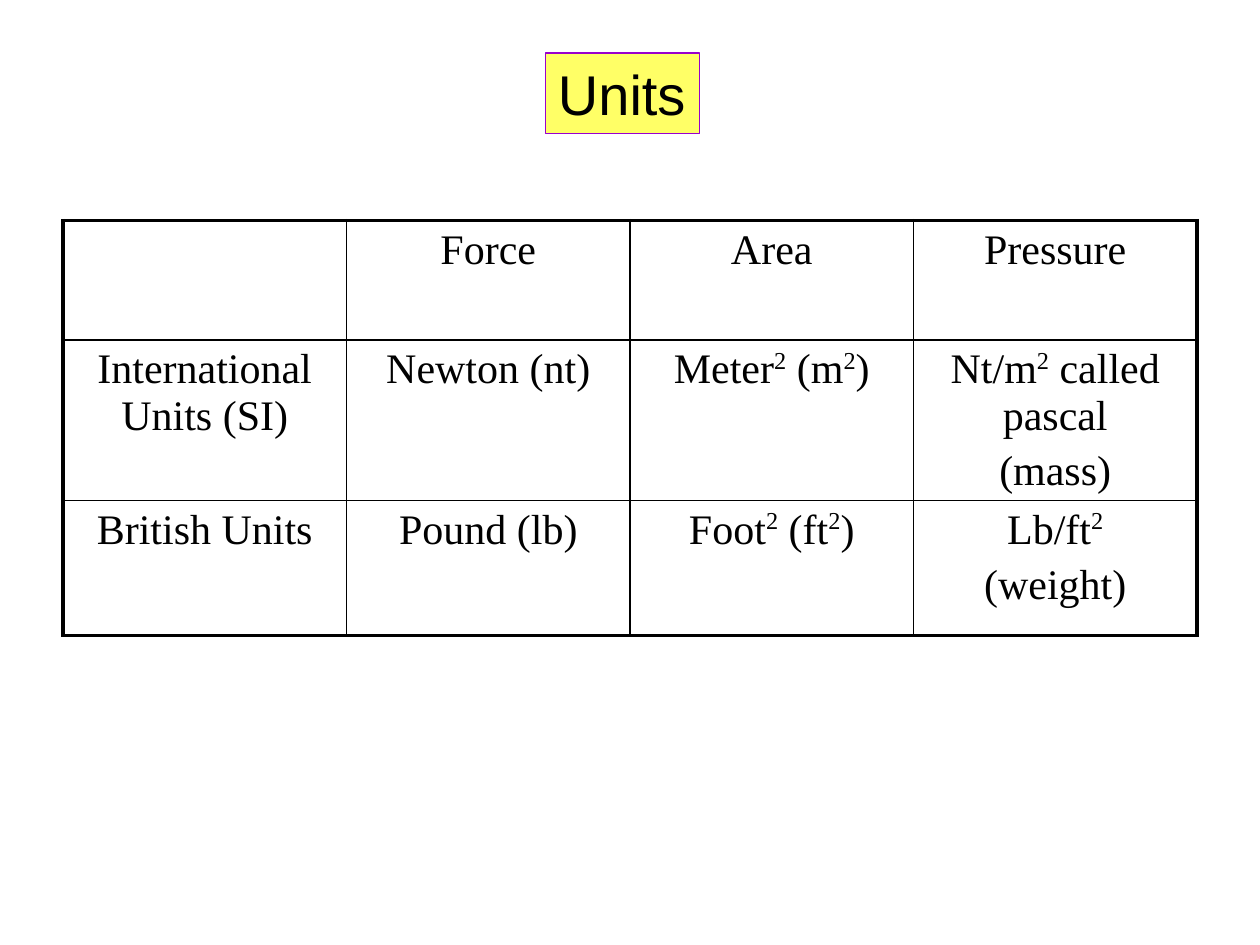
from lxml import etree
from pptx import Presentation, util as u
from pptx.dml.color import RGBColor
from pptx.enum import shapes, text
from pptx.oxml.ns import qn

TITLE = "Units"
# One list of paragraphs per cell; text between carets is superscript.
ROWS = [
    [[], ["Force"], ["Area"], ["Pressure"]],
    [["International Units (SI)"], ["Newton (nt)"], ["Meter^2^ (m^2^)"],
     ["Nt/m^2^ called pascal", "(mass)"]],
    [["British Units"], ["Pound (lb)"], ["Foot^2^ (ft^2^)"],
     ["Lb/ft^2^", "(weight)"]],
]
THEME = {
    "ink": "000000", "title_fill": "FFFF66", "title_line": "9900CC",
    "title_font": "Arial", "title_size": 32,
    "table_font": "Times New Roman", "table_size": 24,
    "outer_line": 2.25, "inner_line": 1, "title_line_width": 0.75,
    "superscript": 34000, "space_before": 20000,
}
SLIDE_WIDTH, SLIDE_HEIGHT = 10, 7.5
MARGIN = 0.05 * SLIDE_WIDTH
TABLE_TOP = 1.75
ROW_HEIGHTS = [0.95, 1.07, 1.07]
TITLE_BOX = (4.33, 0.42, 1.22, 0.64)


def add_run(paragraph, content, font, size):
    run = paragraph.add_run()
    run.text = content
    run.font.name = font
    run.font.size = u.Pt(size)
    run.font.color.rgb = RGBColor.from_string(THEME["ink"])
    return run


def add_title(slide):
    shape = slide.shapes.add_shape(shapes.MSO_SHAPE.RECTANGLE, *map(u.Inches, TITLE_BOX))
    shape.shadow.inherit = False
    shape.fill.solid()
    shape.fill.fore_color.rgb = RGBColor.from_string(THEME["title_fill"])
    shape.line.color.rgb = RGBColor.from_string(THEME["title_line"])
    shape.line.width = u.Pt(THEME["title_line_width"])
    frame = shape.text_frame
    frame.word_wrap = False
    frame.auto_size = text.MSO_AUTO_SIZE.SHAPE_TO_FIT_TEXT
    frame.vertical_anchor = text.MSO_ANCHOR.TOP
    paragraph = frame.paragraphs[0]
    paragraph.alignment = text.PP_ALIGN.LEFT
    add_run(paragraph, TITLE, THEME["title_font"], THEME["title_size"])


def fill_cell(cell, lines):
    frame = cell.text_frame
    for index, line in enumerate(lines):
        paragraph = frame.add_paragraph() if index else frame.paragraphs[0]
        paragraph.alignment = text.PP_ALIGN.CENTER
        spacing = etree.SubElement(paragraph._p.get_or_add_pPr(), qn("a:spcBef"))
        etree.SubElement(spacing, qn("a:spcPct"), val=str(THEME["space_before"]))
        for part_index, part in enumerate(line.split("^")):
            if part:
                run = add_run(paragraph, part, THEME["table_font"], THEME["table_size"])
                if part_index % 2:
                    run._r.get_or_add_rPr().set("baseline", str(THEME["superscript"]))


def set_borders(cell, outer_sides):
    """Draw all four sides, thicker where the side is on the table's edge."""
    properties = cell._tc.get_or_add_tcPr()
    for side, is_outer in outer_sides.items():
        width = THEME["outer_line" if is_outer else "inner_line"]
        line = etree.SubElement(properties, qn(f"a:ln{side}"), w=str(u.Pt(width)))
        fill = etree.SubElement(line, qn("a:solidFill"))
        etree.SubElement(fill, qn("a:srgbClr"), val=THEME["ink"])


def add_units_table(slide):
    row_count, column_count = len(ROWS), len(ROWS[0])
    width = SLIDE_WIDTH - 2 * MARGIN
    table = slide.shapes.add_table(
        row_count, column_count, u.Inches(MARGIN), u.Inches(TABLE_TOP),
        u.Inches(width), u.Inches(sum(ROW_HEIGHTS))).table
    table.first_row = table.horz_banding = False
    for column in table.columns:
        column.width = u.Inches(width / column_count)
    for r, (height, cells) in enumerate(zip(ROW_HEIGHTS, ROWS)):
        table.rows[r].height = u.Inches(height)
        for c, lines in enumerate(cells):
            cell = table.cell(r, c)
            fill_cell(cell, lines)
            set_borders(cell, {"L": c == 0, "R": c == column_count - 1,
                               "T": r == 0, "B": r == row_count - 1})
            cell.fill.background()


def main():
    presentation = Presentation()
    presentation.slide_width = u.Inches(SLIDE_WIDTH)
    presentation.slide_height = u.Inches(SLIDE_HEIGHT)
    slide = presentation.slides.add_slide(presentation.slide_layouts[6])
    add_units_table(slide)
    add_title(slide)
    presentation.save("out.pptx")


if __name__ == "__main__":
    main()
